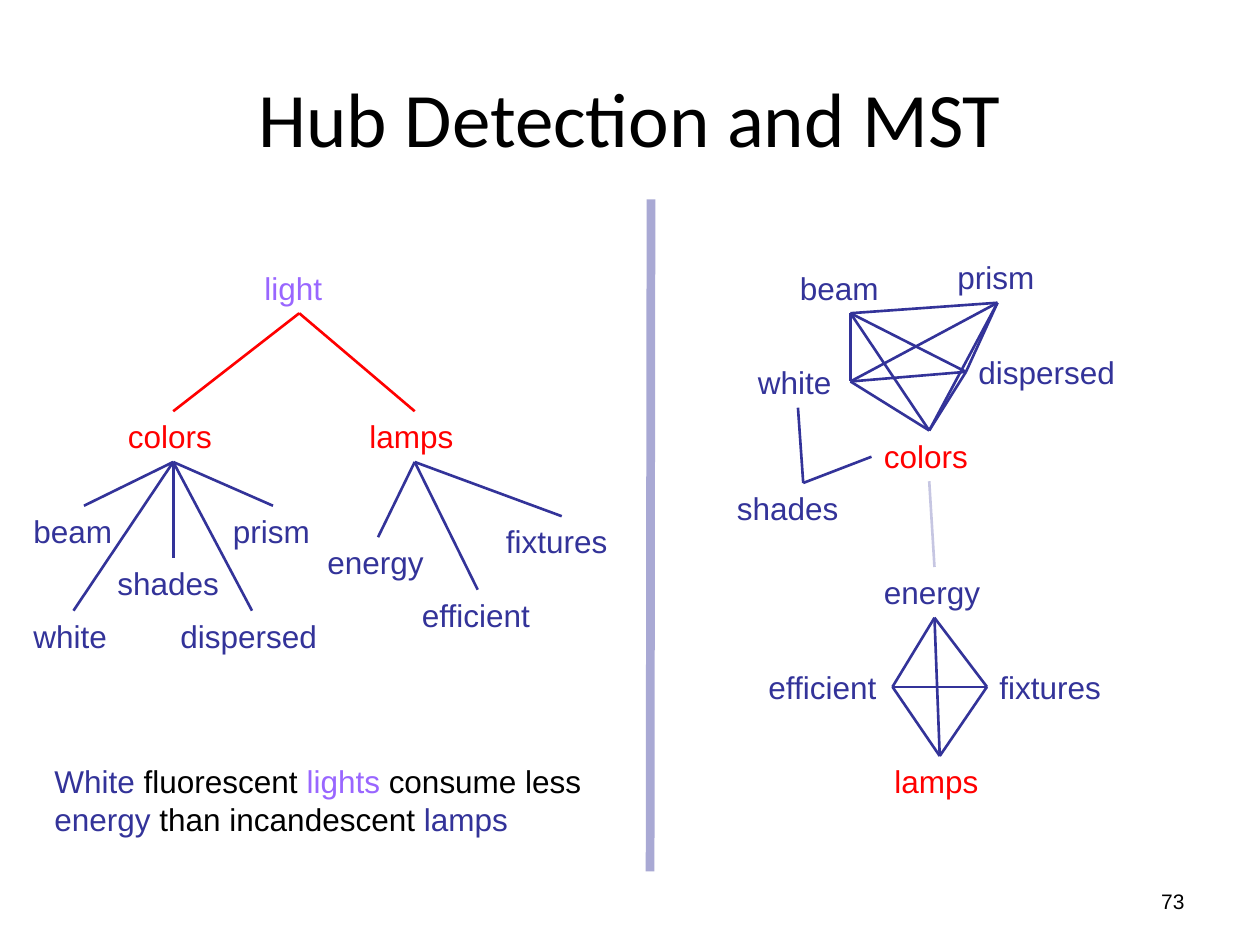
from itertools import combinations

from lxml.etree import SubElement
from pptx import Presentation
from pptx.dml.color import RGBColor
from pptx.enum.shapes import MSO_CONNECTOR
from pptx.enum.text import MSO_ANCHOR, MSO_AUTO_SIZE, PP_ALIGN
from pptx.oxml.ns import qn
from pptx.util import Pt

BLACK, BLUE, RED, VIOLET = "000000", "333399", "FF0000", "9966FF"

# Word: left, top, width, colour
TREE_WORDS = [
    ("light", 144, 150, 54, VIOLET),
    ("colors", 66, 235, 66, RED),
    ("lamps", 204, 235, 66, RED),
    ("beam", 12, 289, 72, BLUE),
    ("prism", 126, 289, 60, BLUE),
    ("dispersed", 96, 349, 96, BLUE),
    ("white", 12, 349, 60, BLUE),
    ("shades", 60, 319, 78, BLUE),
    ("energy", 180, 307, 72, BLUE),
    ("fixtures", 282, 295, 78, BLUE),
    ("efficient", 234, 337, 78, BLUE),
]
GRAPH_WORDS = [
    ("beam", 450, 150, 72, BLUE),
    ("colors", 498, 246, 66, RED),
    ("prism", 540, 144, 60, BLUE),
    ("dispersed", 552, 198, 96, BLUE),
    ("white", 426, 204, 60, BLUE),
    ("energy", 498, 324, 72, BLUE),
    ("lamps", 504, 432, 66, RED),
    ("fixtures", 564, 378, 90, BLUE),
    ("efficient", 432, 378, 78, BLUE),
    ("shades", 414, 276, 90, BLUE),
]

# Parent point, child points, colour
BRANCHES = [
    ((171, 179), [(99, 235), (237, 235)], RED),
    ((99, 264), [(99, 319), (48, 289), (156, 289), (42, 349), (144, 349)], BLUE),
    ((237, 264), [(321, 295), (216, 307), (273, 337)], BLUE),
]
# Every point of a cluster is joined to every other
CLUSTERS = [
    [(486, 179), (486, 218), (552, 212.5), (570, 173), (531, 246)],
    [(510, 392.5), (534, 353), (564, 392.5), (537, 432)],
]
SHADES_PATH = [(456, 233), (459, 276), (498, 261)]

SENTENCE = [
    ("White", BLUE), (" fluorescent ", BLACK), ("lights", VIOLET),
    (" consume less ", BLACK), ("energy", BLUE),
    (" than incandescent ", BLACK), ("lamps", BLUE),
]


def rgb(value):
    return RGBColor.from_string(value)


def add_run(p, text, *, size=18, font="Arial", color=BLACK):
    r = p.add_run()
    r.text = text
    r.font.size = Pt(size)
    r.font.name = font
    r.font.color.rgb = rgb(color)


class Deck:
    """Holds the current slide and the default style."""

    line_width = 1.5
    row_height = 29

    def __init__(self, slide):
        self.s = slide

    def text(self, runs, left, top, width, height=row_height, *,
             align=PP_ALIGN.LEFT, anchor=MSO_ANCHOR.TOP, grow=True, **fmt):
        """Add a text box from (text, colour) pairs."""
        sp = self.s.shapes.add_textbox(Pt(left), Pt(top), Pt(width), Pt(height))
        tf = sp.text_frame
        tf.word_wrap = True
        tf.auto_size = MSO_AUTO_SIZE.SHAPE_TO_FIT_TEXT if grow else MSO_AUTO_SIZE.NONE
        tf.vertical_anchor = anchor
        p = tf.paragraphs[0]
        p.alignment = align
        for text, color in runs:
            add_run(p, text, color=color, **fmt)

    def words(self, words):
        for word, left, top, width, color in words:
            self.text([(word, color)], left, top, width)

    def line(self, start, end, color=BLUE, width=line_width, opacity=None):
        sp = self.s.shapes.add_connector(
            MSO_CONNECTOR.STRAIGHT, *map(Pt, start + end))
        sp.line.color.rgb = rgb(color)
        sp.line.width = Pt(width)
        spPr = sp._element.spPr
        if opacity is not None:
            clr = spPr.find(".//" + qn("a:srgbClr"))
            SubElement(clr, qn("a:alpha")).set("val", str(opacity * 1000))
        SubElement(spPr, qn("a:effectLst"))


def main():
    prs = Presentation()
    prs.slide_width, prs.slide_height = Pt(720), Pt(540)
    deck = Deck(prs.slides.add_slide(prs.slide_layouts[6]))

    deck.text([("Hub Detection and MST", BLACK)], 36, 21.6, 648, 90,
              align=PP_ALIGN.CENTER, anchor=MSO_ANCHOR.MIDDLE, grow=False,
              size=44, font="Calibri")

    deck.words(GRAPH_WORDS)
    for cluster in CLUSTERS:
        for start, end in combinations(cluster, 2):
            deck.line(start, end)
    for start, end in zip(SHADES_PATH, SHADES_PATH[1:]):
        deck.line(start, end)
    deck.line((534, 324), (531, 275), opacity=27)

    deck.words(TREE_WORDS)
    for parent, children, color in BRANCHES:
        for child in children:
            deck.line(parent, child, color)

    deck.line((372, 114), (371.5, 498), width=5, opacity=41)
    deck.text(SENTENCE, 24, 432, 342, 51)
    deck.text([("73", BLACK)], 516, 500.5, 168, align=PP_ALIGN.RIGHT,
              anchor=MSO_ANCHOR.MIDDLE, grow=False, size=12)

    prs.save("out.pptx")


if __name__ == "__main__":
    main()
